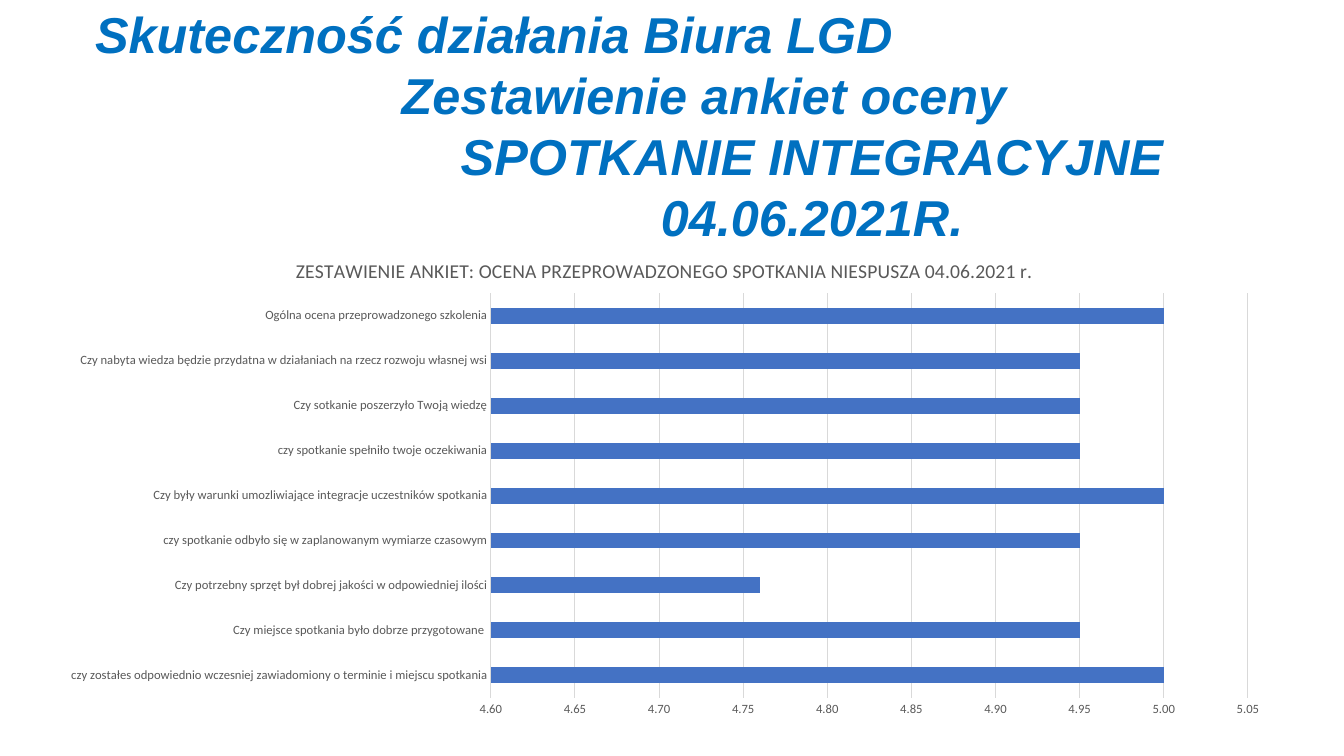
import pptx
import pptx.util
import pptx.chart.data
import pptx.dml.color
import pptx.enum.chart
import pptx.enum.text
import pptx.oxml

PX = 9525
COLORS = {"title": "0070C0", "bar": "4472C4", "text": "595959", "grid": "D9D9D9"}
TITLE_LINES = [
    ("Skuteczność działania Biura LGD", 4),
    ("Zestawienie ankiet oceny", 296),
    ("SPOTKANIE INTEGRACYJNE 04.06.2021R.", None),
]
CHART_TITLE = "ZESTAWIENIE ANKIET: OCENA PRZEPROWADZONEGO SPOTKANIA NIESPUSZA 04.06.2021 r."
RATINGS = [
    ("czy zostałes odpowiednio wczesniej zawiadomiony o terminie i miejscu spotkania", 5),
    ("Czy miejsce spotkania było dobrze przygotowane ", 4.95),
    ("Czy potrzebny sprzęt był dobrej jakości w odpowiedniej ilości", 4.76),
    ("czy spotkanie odbyło się w zaplanowanym wymiarze czasowym", 4.95),
    ("Czy były warunki umozliwiające integracje uczestników spotkania", 5),
    ("czy spotkanie spełniło twoje oczekiwania", 4.95),
    ("Czy sotkanie poszerzyło Twoją wiedzę", 4.95),
    ("Czy nabyta wiedza będzie przydatna w działaniach na rzecz rozwoju własnej wsi", 4.95),
    ("Ogólna ocena przeprowadzonego szkolenia", 5),
]


def rgb(name):
    """Return a named colour."""
    return pptx.dml.color.RGBColor.from_string(COLORS[name])


def style_font(font, name, size, color):
    """Set typeface, size and colour."""
    font.name = name
    font.size = pptx.util.Pt(size)
    font.color.rgb = rgb(color)


def style_line(line, color):
    """Draw a thin line in a named colour."""
    line.color.rgb = rgb(color)
    line.width = pptx.util.Pt(0.75)


def manual_layout(**values):
    """Build a chart layout from fractions of the chart area."""
    ns = "http://schemas.openxmlformats.org/drawingml/2006/chart"
    target = '<c:layoutTarget val="inner"/>' if "w" in values else ""
    modes = "".join(f'<c:{k}Mode val="edge"/>' for k in "xy")
    sizes = "".join(f'<c:{k} val="{v}"/>' for k, v in values.items())
    return pptx.oxml.parse_xml(
        f'<c:layout xmlns:c="{ns}"><c:manualLayout>{target}{modes}{sizes}'
        "</c:manualLayout></c:layout>"
    )


def add_title(s, x, y, w, h):
    """Fill the title placeholder with its three staggered lines."""
    sp = s.shapes.title
    sp.left, sp.top, sp.width, sp.height = (v * PX for v in (x, y, w, h))
    tf = sp.text_frame
    tf.word_wrap = True
    tf.auto_size = pptx.enum.text.MSO_AUTO_SIZE.NONE
    tf.vertical_anchor = pptx.enum.text.MSO_ANCHOR.MIDDLE
    align = pptx.enum.text.PP_ALIGN
    for i, (text, indent) in enumerate(TITLE_LINES):
        p = tf.add_paragraph() if i else tf.paragraphs[0]
        p.line_spacing = pptx.util.Pt(43.5)
        p.space_before = pptx.util.Pt(0)
        p.alignment = align.CENTER if indent is None else align.LEFT
        if indent is not None:
            p._p.get_or_add_pPr().set("marL", str(indent * PX))
        r = p.add_run()
        r.text = text
        style_font(r.font, "Arial", 36, "title")
        r.font.bold = r.font.italic = True


def style_axes(chart):
    """Format the category and value axes."""
    for axis in (chart.category_axis, chart.value_axis):
        axis.major_tick_mark = axis.minor_tick_mark = pptx.enum.chart.XL_TICK_MARK.NONE
        style_font(axis.tick_labels.font, "Calibri", 9, "text")
    chart.category_axis.has_major_gridlines = False
    style_line(chart.category_axis.format.line, "grid")
    axis = chart.value_axis
    axis.minimum_scale, axis.maximum_scale, axis.major_unit = 4.6, 5.05, 0.05
    axis.has_major_gridlines = True
    style_line(axis.major_gridlines.format.line, "grid")
    axis.format.line.fill.background()
    axis.tick_labels.number_format = "0.00"
    axis.tick_labels.number_format_is_linked = False


def add_ratings_chart(s, x, y, w, h):
    """Add the bar chart of survey ratings."""
    data = pptx.chart.data.CategoryChartData(number_format="0.00")
    data.categories = [question for question, _ in RATINGS]
    data.add_series("Series 1", [rating for _, rating in RATINGS])
    kind = pptx.enum.chart.XL_CHART_TYPE.BAR_CLUSTERED
    chart = s.shapes.add_chart(kind, *(v * PX for v in (x, y, w, h)), data).chart
    chart.has_legend = False
    style_font(chart.font, "Calibri", 10, "text")
    chart.has_title = True
    title = chart.chart_title
    r = title.text_frame.paragraphs[0].add_run()
    r.text = CHART_TITLE
    style_font(r.font, "Calibri", 14, "text")
    r.font.bold = False
    title.include_in_layout = False
    for old in title._element.xpath("c:layout"):
        title._element.remove(old)
    title._element.xpath("c:tx")[0].addnext(manual_layout(x=0.2, y=0.04))
    plot_area = chart._chartSpace.chart.plotArea
    for old in plot_area.xpath("c:layout"):
        plot_area.remove(old)
    plot_area.insert(0, manual_layout(x=0.36, y=0.12, w=0.61, h=0.82))
    plot = chart.plots[0]
    plot.gap_width = 182
    plot.vary_by_categories = False
    fill = plot.series[0].format.fill
    fill.solid()
    fill.fore_color.rgb = rgb("bar")
    style_axes(chart)


def main():
    """Build and save the slide."""
    prs = pptx.Presentation()
    prs.slide_width, prs.slide_height = 1280 * PX, 720 * PX
    s = prs.slides.add_slide(prs.slide_layouts[5])
    add_title(s, 77, 27, 1097, 184)
    add_ratings_chart(s, 42, 223, 1182, 470)
    prs.save("out.pptx")


if __name__ == "__main__":
    main()
